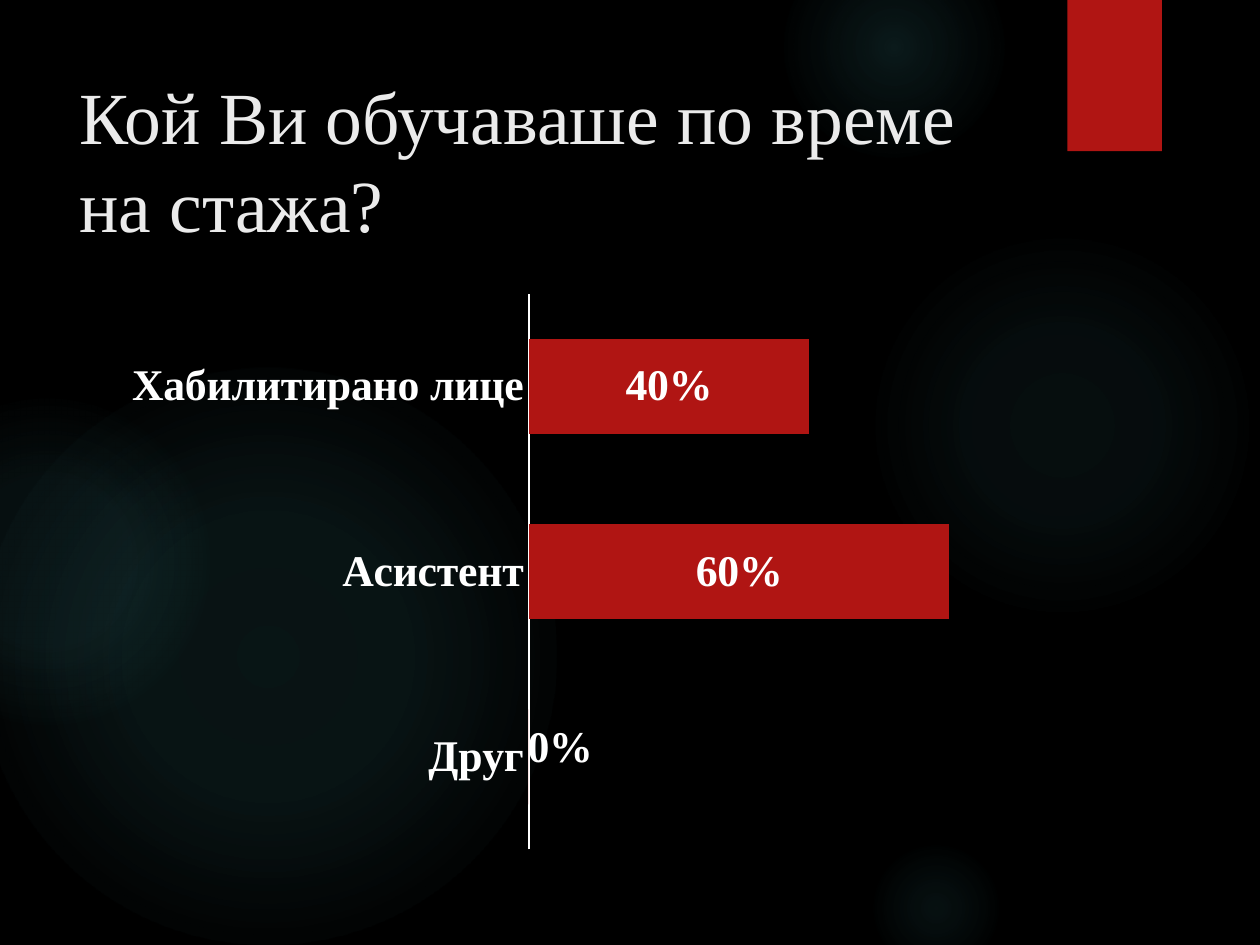
import pptx
import pptx.chart.data
import pptx.dml.color
import pptx.enum.chart
import pptx.enum.shapes
import pptx.enum.text
import pptx.oxml
import pptx.oxml.ns
import pptx.util

Pt = pptx.util.Pt
SHAPES = pptx.enum.shapes.MSO_SHAPE
CHARTS = pptx.enum.chart

# Content
TITLE = "Кой Ви обучаваше по време на стажа?"
ANSWERS = [("Друг", 0), ("Асистент", 0.6), ("Хабилитирано лице", 0.4)]

# Background glows: left, top, diameter, then (position %, opacity %) stops
GLOWS = [
    (496, 132, 222, [(0, 7), (36, 6), (69, 0)]),
    (448, -36, 126, [(0, 14), (36, 7), (73, 0)]),
    (496, 480, 78, [(0, 9), (36, 5), (66, 0)]),
    (-12, 210, 330, [(0, 11), (36, 10), (75, 0)]),
    (-66, 228, 186, [(0, 8), (36, 8), (72, 0)]),
]

THEME = {
    "background": "000000", "glow": "50B9C1", "accent": "B01513",
    "title": "EBEBEB", "text": "FFFFFF",
    "font": "Times New Roman", "title_size": 42, "label_size": 25,
}

# Lengths in points: left, top, width, height
TITLE_BOX = (38.2, 36, 555.8, 110.2)
RIBBON_BOX = (610, 0, 54, 86.4)
CHART_BOX = (64.8, 161.3, 528.5, 330.5)
PLOT_BOX = (302.3, 168, 280.6, 317.7)


def color(name):
    return pptx.dml.color.RGBColor.from_string(THEME[name])


def set_font(font, size, tint, bold=False):
    font.name = THEME["font"]
    font.size = Pt(THEME[size])
    font.bold = bold
    font.color.rgb = color(tint)


def add_plain_shape(page, kind, box):
    shape = page.shapes.add_shape(kind, *map(Pt, box))
    shape.shadow.inherit = False
    shape.line.fill.background()
    return shape


def parse_xml(body):
    """Parse a fragment whose first tag takes the a: and c: namespaces."""
    tag, rest = body.split(">", 1)
    namespaces = pptx.oxml.ns.nsdecls("a", "c")
    return pptx.oxml.parse_xml(f"{tag} {namespaces}>{rest}")


def add_glow(page, left, top, diameter, stops):
    shape = add_plain_shape(page, SHAPES.OVAL, (left, top, diameter, diameter))
    stop_xml = "".join(
        f'<a:gs pos="{position * 1000}"><a:srgbClr val="{THEME["glow"]}">'
        f'<a:alpha val="{opacity * 1000}"/></a:srgbClr></a:gs>'
        for position, opacity in stops)
    gradient = parse_xml(
        f'<a:gradFill><a:gsLst>{stop_xml}</a:gsLst><a:path path="circle">'
        '<a:fillToRect l="50000" t="50000" r="50000" b="50000"/></a:path></a:gradFill>')
    shape.fill.background()
    properties = shape.element.spPr
    properties.replace(properties.find(pptx.oxml.ns.qn("a:noFill")), gradient)


def add_ribbon(page):
    shape = add_plain_shape(page, SHAPES.RECTANGLE, RIBBON_BOX)
    shape.fill.solid()
    shape.fill.fore_color.rgb = color("accent")
    effects = shape.element.spPr.find(pptx.oxml.ns.qn("a:effectLst"))
    effects.append(parse_xml(
        f'<a:outerShdw blurRad="{Pt(3)}" dist="{Pt(2)}" dir="5400000">'
        '<a:srgbClr val="000000"><a:alpha val="45000"/></a:srgbClr></a:outerShdw>'))


def add_title(page):
    box = page.shapes.add_textbox(*map(Pt, TITLE_BOX))
    frame = box.text_frame
    frame.word_wrap = True
    frame.vertical_anchor = pptx.enum.text.MSO_ANCHOR.MIDDLE
    para = frame.paragraphs[0]
    para.text = TITLE
    set_font(para.font, "title_size", "title")


def layout_xml(settings):
    parts = "".join(f'<c:{tag} val="{value}"/>' for tag, value in settings)
    return parse_xml(f"<c:layout><c:manualLayout>{parts}</c:manualLayout></c:layout>")


def place_plot(chart):
    left, top, width, height = CHART_BOX
    plot_left, plot_top, plot_width, plot_height = PLOT_BOX
    layout = layout_xml([
        ("layoutTarget", "inner"), ("xMode", "edge"), ("yMode", "edge"),
        ("x", round((plot_left - left) / width, 3)),
        ("y", round((plot_top - top) / height, 3)),
        ("w", round(plot_width / width, 3)),
        ("h", round(plot_height / height, 3))])
    area = chart.element.chart.plotArea
    for old in area.findall(pptx.oxml.ns.qn("c:layout")):
        area.remove(old)
    area.insert(0, layout)


def add_answer_chart(page):
    data = pptx.chart.data.CategoryChartData(number_format="0%")
    data.categories = [answer for answer, share in ANSWERS]
    data.add_series("Series 1", [share for answer, share in ANSWERS])
    chart = page.shapes.add_chart(
        CHARTS.XL_CHART_TYPE.BAR_STACKED, *map(Pt, CHART_BOX), data).chart
    chart.has_legend = False
    chart.has_title = False
    set_font(chart.font, "label_size", "text", bold=True)
    place_plot(chart)

    # Axes
    answers = chart.category_axis
    answers.major_tick_mark = CHARTS.XL_TICK_MARK.NONE
    answers.format.line.color.rgb = color("text")
    answers.format.line.width = Pt(1)
    set_font(answers.tick_labels.font, "label_size", "text", bold=True)
    shares = chart.value_axis
    shares.minimum_scale, shares.maximum_scale = 0, 0.7
    shares.has_major_gridlines = False
    shares.visible = False

    # Bars and their labels
    plot = chart.plots[0]
    plot.gap_width, plot.overlap = 95, 100
    plot.vary_by_categories = False
    series = plot.series[0]
    series.format.fill.solid()
    series.format.fill.fore_color.rgb = color("accent")
    labels = series.data_labels
    labels.show_value = True
    labels.number_format = "0%"
    labels.number_format_is_linked = False
    set_font(labels.font, "label_size", "text", bold=True)

    # The zero label moves right, clear of the axis
    zero_label = series.points[0].data_label
    set_font(zero_label.font, "label_size", "text", bold=True)
    label_xml = labels._element.find(pptx.oxml.ns.qn("c:dLbl"))
    label_xml.insert(1, layout_xml([("x", 0.034), ("y", -0.015)]))


def main():
    deck = pptx.Presentation()
    deck.slide_width, deck.slide_height = Pt(720), Pt(540)
    page = deck.slides.add_slide(deck.slide_layouts[6])
    page.background.fill.solid()
    page.background.fill.fore_color.rgb = color("background")
    for glow in GLOWS:
        add_glow(page, *glow)
    add_ribbon(page)
    add_title(page)
    add_answer_chart(page)
    deck.save("out.pptx")


if __name__ == "__main__":
    main()
